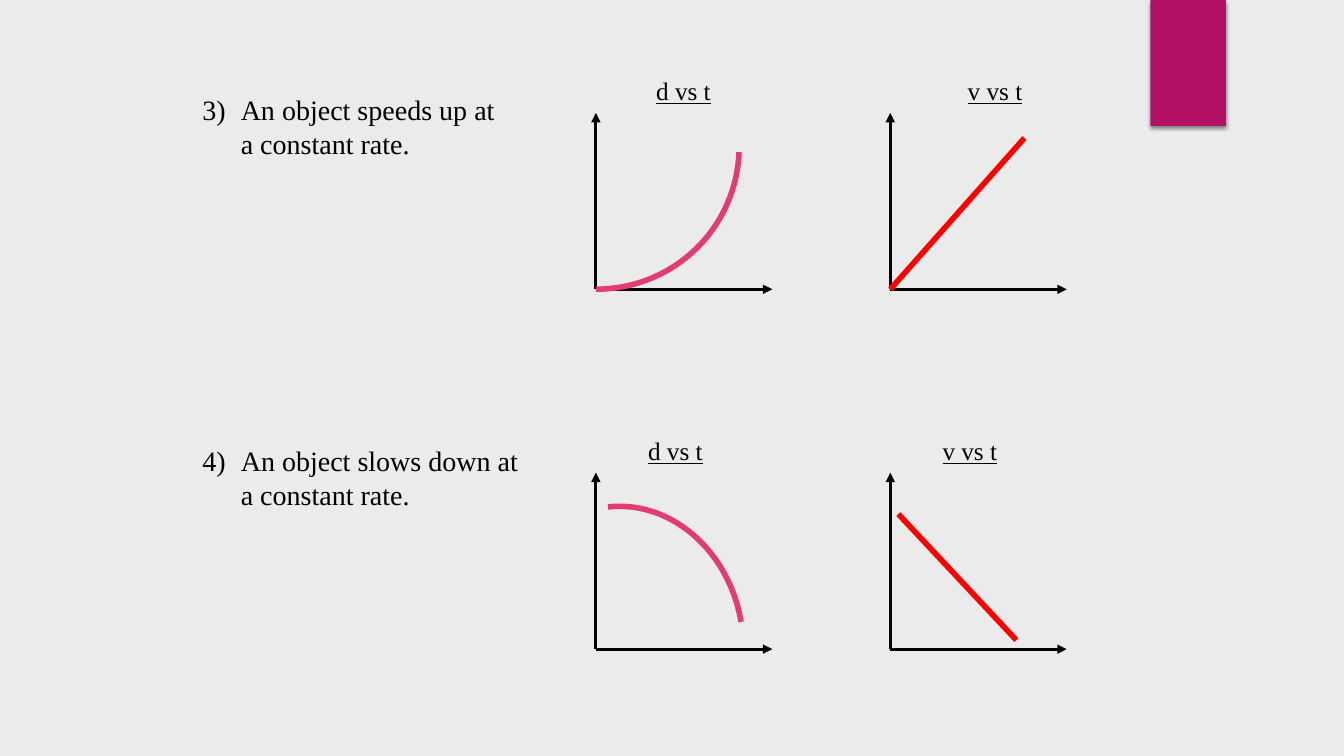
from dataclasses import dataclass

from lxml.etree import SubElement
from pptx import Presentation
from pptx.dml.color import RGBColor
from pptx.enum.shapes import MSO_CONNECTOR, MSO_SHAPE
from pptx.enum.text import MSO_AUTO_SIZE
from pptx.oxml.ns import qn
from pptx.util import Inches, Pt

CASES = [
    {
        "statement": "3)\tAn object speeds up at a constant rate.",
        "statement_at": (1.91, 0.87, 3.17, 0.77),
        "label_lefts": (6.41, 9.5),
        "label_top": 0.7,
        "origin_y": 2.87,
        "distance_curve": [(5.91, 2.87), (6.68, 2.87), (7.3, 2.27), (7.33, 1.51)],
        "velocity_line": [(8.83, 2.87), (10.16, 1.37)],
    },
    {
        "statement": "4)\tAn object slows down at a constant rate.",
        "statement_at": (1.91, 4.35, 3.42, 0.77),
        "label_lefts": (6.33, 9.25),
        "label_top": 4.27,
        "origin_y": 6.44,
        "distance_curve": [(6.03, 5.03), (6.65, 4.96), (7.23, 5.46), (7.35, 6.17)],
        "velocity_line": [(8.91, 5.1), (10.08, 6.35)],
    },
]
LABELS = ("d vs t", "v vs t")
ORIGINS_X = (5.91, 8.83)
AXIS_LENGTH = 1.75
LABEL_SIZE = (1.17, 0.4)
HANGING_INDENT = 0.38
CURVE_STEPS = 48
TAB_AT = (11.41, 0, 0.75, 1.25)


@dataclass(frozen=True)
class Theme:
    """Colours, type and line weights of the slide."""

    background: str = "EBEBEB"
    accent: str = "B31166"
    ink: str = "000000"
    curve: str = "E33D6F"
    velocity: str = "FF0000"
    font: str = "Times New Roman"
    statement_size: float = 20
    label_size: float = 18
    axis_width: float = 2.25
    plot_width: float = 4


THEME = Theme()


def colour(code):
    """Turn a hex code into a colour."""
    return RGBColor.from_string(code)


def inches(values):
    """Turn a sequence of numbers into lengths."""
    return [Inches(value) for value in values]


def add_corner_tab(page):
    """Add the accent block with its soft shadow."""
    block = page.shapes.add_shape(MSO_SHAPE.RECTANGLE, *inches(TAB_AT))
    block.fill.solid()
    block.fill.fore_color.rgb = colour(THEME.accent)
    block.line.fill.background()
    block.shadow.inherit = False
    effects = block._element.spPr.find(qn("a:effectLst"))
    shadow = SubElement(effects, qn("a:outerShdw"), blurRad=str(Pt(3)),
                        dist=str(Pt(2)), dir="5400000", rotWithShape="0")
    shade = SubElement(shadow, qn("a:srgbClr"), val=THEME.ink)
    SubElement(shade, qn("a:alpha"), val="45000")


def add_text(page, place, words, size, underline=False, indent=0):
    """Add a text box with one paragraph."""
    box = page.shapes.add_textbox(*inches(place))
    frame = box.text_frame
    frame.word_wrap = True
    frame.auto_size = MSO_AUTO_SIZE.SHAPE_TO_FIT_TEXT
    para = frame.paragraphs[0]
    para.text = words
    if indent:
        properties = para._p.get_or_add_pPr()
        properties.set("marL", str(Inches(indent)))
        properties.set("indent", str(-Inches(indent)))
    for span in para.runs:
        span.font.name = THEME.font
        span.font.size = Pt(size)
        span.font.underline = underline
        span.font.color.rgb = colour(THEME.ink)


def add_line(page, start, end, code, width, arrow=False):
    """Add a straight line, with an arrowhead at its end if wanted."""
    line = page.shapes.add_connector(MSO_CONNECTOR.STRAIGHT, *inches((*start, *end)))
    line.line.color.rgb = colour(code)
    line.line.width = Pt(width)
    if arrow:
        SubElement(line.line._get_or_add_ln(), qn("a:tailEnd"), type="triangle")
    SubElement(line._element.spPr, qn("a:effectLst"))


def bezier_point(controls, t):
    """Return the point at t on a cubic curve."""
    weights = ((1 - t) ** 3, 3 * t * (1 - t) ** 2, 3 * t ** 2 * (1 - t), t ** 3)
    return tuple(Inches(sum(weight * value for weight, value in zip(weights, axis)))
                 for axis in zip(*controls))


def add_curve(page, controls):
    """Add an open curve through points on a cubic."""
    points = [bezier_point(controls, step / CURVE_STEPS) for step in range(CURVE_STEPS + 1)]
    builder = page.shapes.build_freeform(*points[0])
    builder.add_line_segments(points[1:], close=False)
    curve = builder.convert_to_shape()
    curve.fill.background()
    curve.line.color.rgb = colour(THEME.curve)
    curve.line.width = Pt(THEME.plot_width)
    curve.shadow.inherit = False


def add_case(page, case):
    """Add one statement with its two graphs."""
    add_text(page, case["statement_at"], case["statement"],
             THEME.statement_size, indent=HANGING_INDENT)
    y = case["origin_y"]
    for label, left, x in zip(LABELS, case["label_lefts"], ORIGINS_X):
        add_text(page, (left, case["label_top"], *LABEL_SIZE), label,
                 THEME.label_size, underline=True)
        for end in ((x, y - AXIS_LENGTH), (x + AXIS_LENGTH, y)):
            add_line(page, (x, y), end, THEME.ink, THEME.axis_width, arrow=True)
    add_curve(page, case["distance_curve"])
    add_line(page, *case["velocity_line"], THEME.velocity, THEME.plot_width)


def main():
    """Build and save the slide."""
    deck = Presentation()
    deck.slide_width, deck.slide_height = inches((13.33, 7.5))
    page = deck.slides.add_slide(deck.slide_layouts[6])
    page.background.fill.solid()
    page.background.fill.fore_color.rgb = colour(THEME.background)
    add_corner_tab(page)
    for case in CASES:
        add_case(page, case)
    deck.save("out.pptx")


if __name__ == "__main__":
    main()
